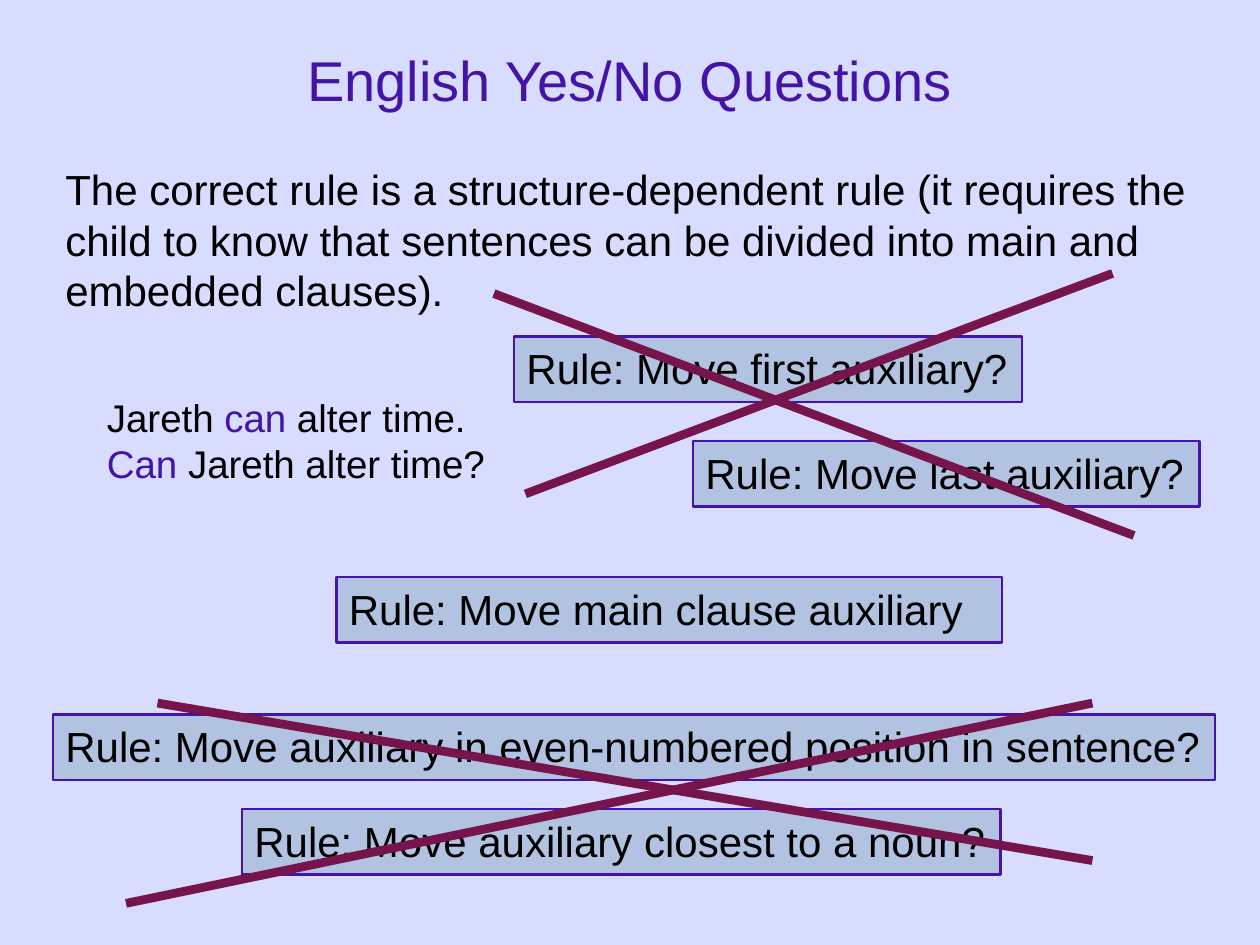
from dataclasses import dataclass

from lxml.etree import SubElement
from pptx import Presentation
from pptx.dml.color import RGBColor
from pptx.enum.shapes import MSO_CONNECTOR, MSO_SHAPE
from pptx.enum.text import MSO_ANCHOR, PP_ALIGN
from pptx.oxml.ns import qn
from pptx.util import Inches, Pt


@dataclass(frozen=True)
class Theme:
    font: str = "Arial"
    background: str = "D8DCFF"
    ink: str = "000000"
    accent: str = "4414A7"
    rule_fill: str = "0D585D"
    rule_opacity: int = 19
    strike: str = "76154B"
    title_size: int = 32
    body_size: int = 24
    example_size: int = 22
    border_width: float = 1.25
    strike_width: float = 5


THEME = Theme()

# Content: a paragraph is a list of (text, colour) spans
TITLE = [[("English Yes/No Questions", THEME.accent)]]
CLAIM = [[("The correct rule is a structure-dependent rule (it requires the child "
           "to know that sentences can be divided into main and embedded clauses).",
           THEME.ink)]]
EXAMPLES = [
    [("Jareth ", THEME.ink), ("can", THEME.accent), (" alter time.", THEME.ink)],
    [("Can", THEME.accent), (" Jareth alter time?", THEME.ink)],
]

# Rule boxes: text, left, top, width
RULE_HEIGHT = 0.52
RULES = [
    ("Rule: Move first auxiliary?", 4.08, 2.67, 4.03),
    ("Rule: Move last auxiliary?", 5.5, 3.5, 4.02),
    ("Rule: Move main clause auxiliary", 2.67, 4.58, 5.28),
    ("Rule: Move auxiliary in even-numbered position in sentence?", 0.42, 5.67, 9.22),
    ("Rule: Move auxiliary closest to a noun?", 1.92, 6.42, 6.02),
]

# Strokes crossing out the wrong rules: start x, start y, end x, end y
STRIKES = [
    (3.92, 2.33, 9, 4.25),
    (4.17, 3.92, 8.83, 2.17),
    (1, 7.17, 8.67, 5.58),
    (1.25, 5.58, 8.67, 6.83),
]


def colour(value):
    return RGBColor.from_string(value)


def write_text(shape, paragraphs, size, align=PP_ALIGN.LEFT, anchor=MSO_ANCHOR.TOP,
               right_margin=0.1):
    frame = shape.text_frame
    frame.word_wrap = True
    frame.vertical_anchor = anchor
    frame.margin_right = Inches(right_margin)
    for index, spans in enumerate(paragraphs):
        para = frame.add_paragraph() if index else frame.paragraphs[0]
        para.alignment = align
        for text, ink in spans:
            span = para.add_run()
            span.text = text
            span.font.name = THEME.font
            span.font.size = Pt(size)
            span.font.color.rgb = colour(ink)


def add_text(page, place, paragraphs, size, **text_format):
    box = page.shapes.add_textbox(*map(Inches, place))
    write_text(box, paragraphs, size, **text_format)


def add_rule(page, text, left, top, width):
    box = page.shapes.add_shape(
        MSO_SHAPE.RECTANGLE, *map(Inches, (left, top, width, RULE_HEIGHT)))
    box.shadow.inherit = False
    box.fill.solid()
    box.fill.fore_color.rgb = colour(THEME.rule_fill)
    fill = box._element.spPr.find(qn("a:solidFill"))
    SubElement(fill[0], qn("a:alpha"), val=str(THEME.rule_opacity * 1000))
    box.line.color.rgb = colour(THEME.accent)
    box.line.width = Pt(THEME.border_width)
    # No right margin, so the snug text stays on one line
    write_text(box, [[(text, THEME.ink)]], THEME.body_size, right_margin=0)


def add_strike(page, *ends):
    stroke = page.shapes.add_connector(MSO_CONNECTOR.STRAIGHT, *map(Inches, ends))
    stroke.line.color.rgb = colour(THEME.strike)
    stroke.line.width = Pt(THEME.strike_width)
    SubElement(stroke._element.spPr, qn("a:effectLst"))


def main():
    deck = Presentation()
    deck.slide_width, deck.slide_height = Inches(10), Inches(7.5)
    page = deck.slides.add_slide(deck.slide_layouts[6])
    page.background.fill.solid()
    page.background.fill.fore_color.rgb = colour(THEME.background)

    # Title, claim and example sentences
    add_text(page, (0, 0, 10, 1.25), TITLE, THEME.title_size,
             align=PP_ALIGN.CENTER, anchor=MSO_ANCHOR.MIDDLE)
    add_text(page, (0.42, 1.25, 9.33, 1.31), CLAIM, THEME.body_size)
    add_text(page, (0.75, 3.08, 3.92, 0.83), EXAMPLES, THEME.example_size)

    # Candidate rules, then the strokes over them
    for rule in RULES:
        add_rule(page, *rule)
    for strike in STRIKES:
        add_strike(page, *strike)

    deck.save("out.pptx")


if __name__ == "__main__":
    main()
